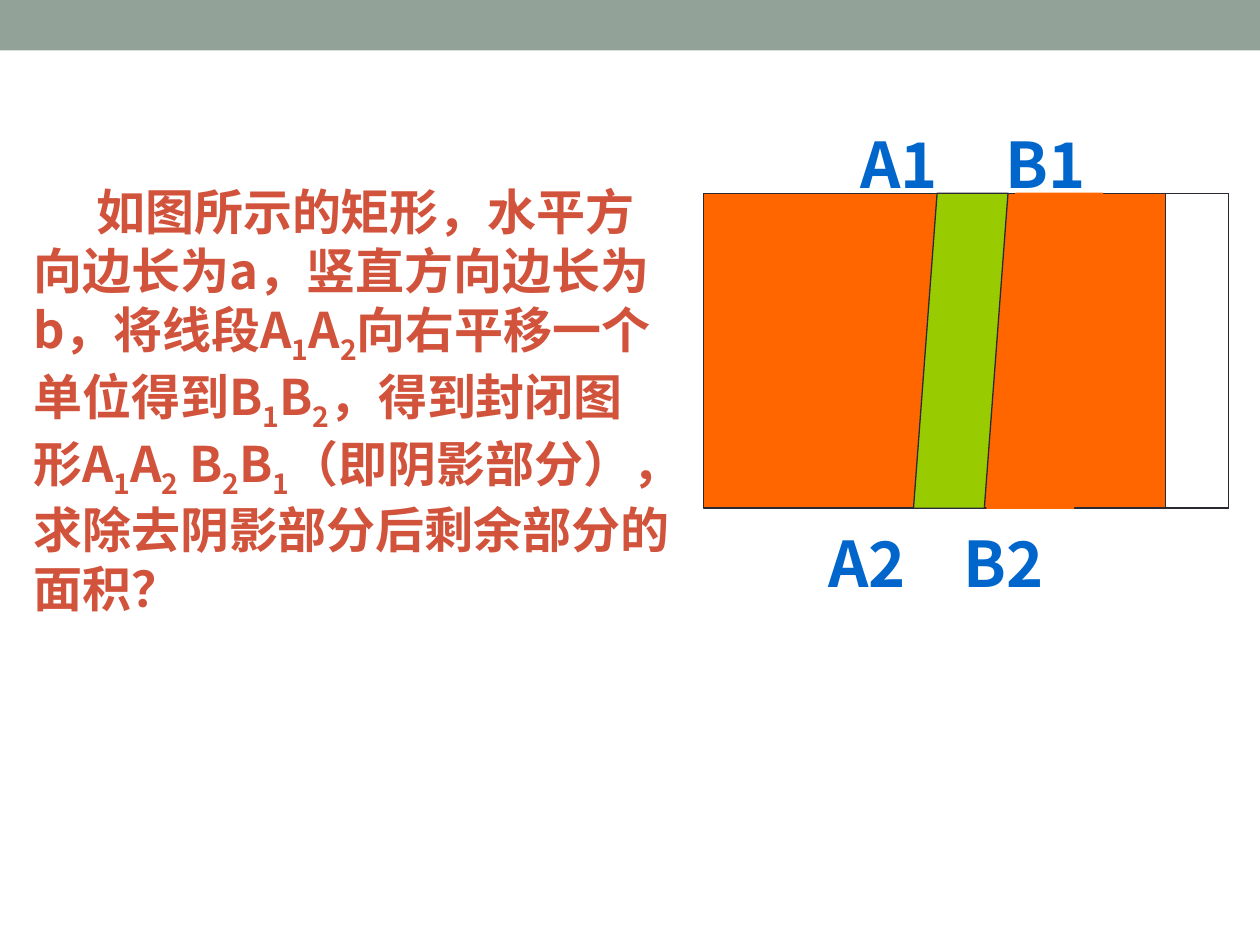
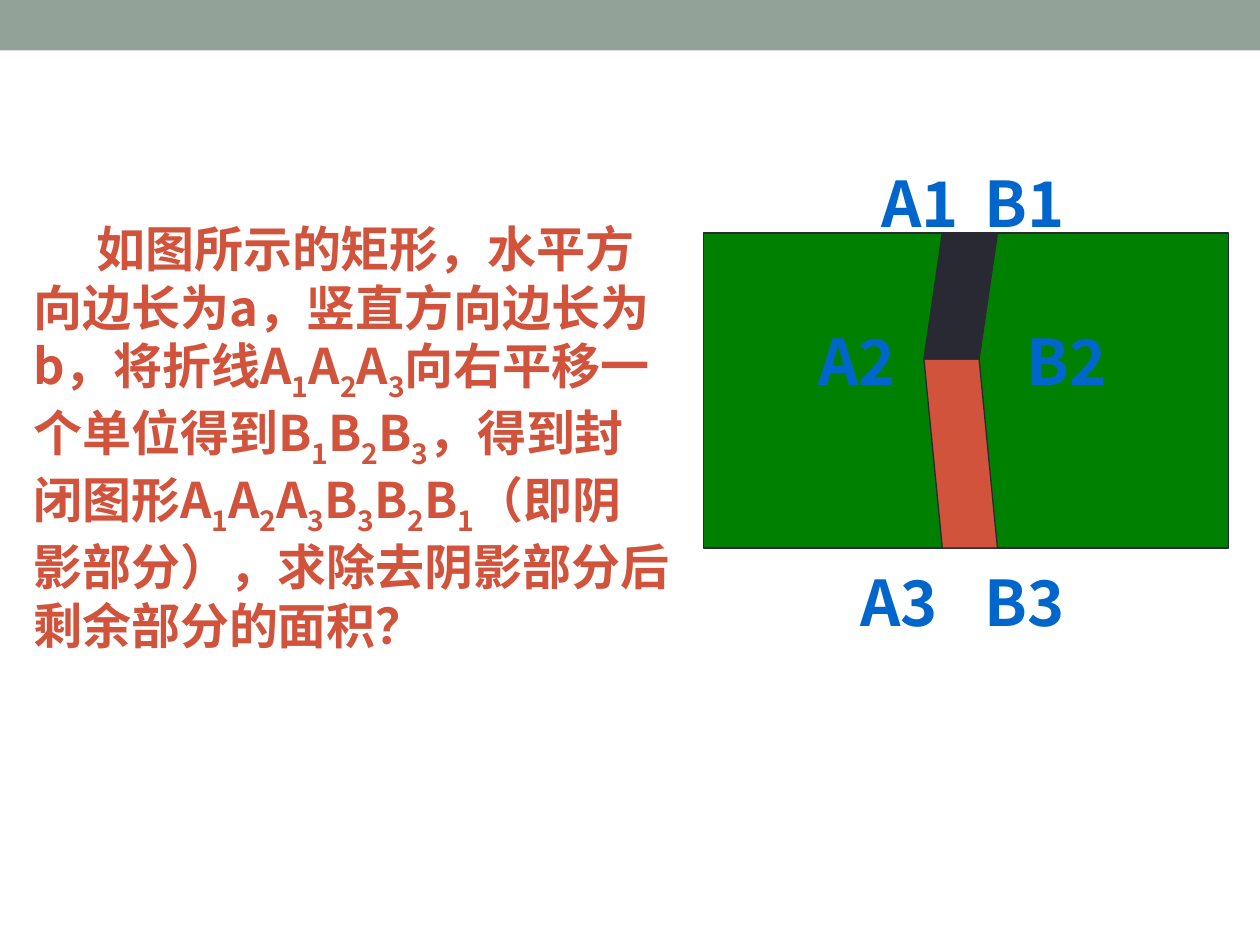
from lxml import etree
from pptx import Presentation
from pptx.dml.color import RGBColor
from pptx.enum.shapes import MSO_SHAPE
from pptx.enum.text import MSO_AUTO_SIZE, PP_ALIGN
from pptx.oxml.ns import qn
from pptx.util import Pt

PX = 7620  # EMU per px, 120 px to the inch
RECT = MSO_SHAPE.RECTANGLE
SLANTED = MSO_SHAPE.PARALLELOGRAM
FIT_SHAPE = MSO_AUTO_SIZE.SHAPE_TO_FIT_TEXT
CENTER = PP_ALIGN.CENTER
FONT = "Noto Sans CJK SC"
COLORS = {
    "band": "93A299", "ink": "292934", "question": "D2533C",
    "label": "0066CC", "label_edge": "99CCFF", "orange": "FF6600",
    "lime": "99CC00", "green": "008000", "white": "FFFFFF",
}
LABEL_SIZE = (92, 60)
INDENT = 60

# Each underscore lowers the digit that follows it.
SLIDES = [
    {
        "figure": [
            (RECT, (670, 184, 500, 300), "orange", "ink", False),
            (SLANTED, (870, 184, 90, 300), "lime", "ink", False),
            (SLANTED, (940, 184, 110, 300), "orange", "orange", False),
            (RECT, (1110, 184, 60, 300), "white", "ink", False),
        ],
        "labels": {"A1": (810, 114), "B1": (950, 114),
                   "A2": (780, 494), "B2": (910, 494)},
        "question_box": (20, 167, 630, 464),
        "question": "如图所示的矩形，水平方向边长为a，竖直方向边长为b，将线段A_1A_2"
                    "向右平移一个单位得到B_1B_2，得到封闭图形A_1A_2 B_2B_1"
                    "（即阴影部分），求除去阴影部分后剩余部分的面积？",
    },
    {
        "figure": [
            (RECT, (670, 222, 500, 300), "green", "ink", False),
            (SLANTED, (880, 342, 70, 180), "question", "ink", True),
            (SLANTED, (880, 222, 70, 120), "ink", "ink", False),
        ],
        "labels": {"A1": (830, 151), "B1": (930, 151),
                   "A2": (770, 301), "B2": (970, 301),
                   "A3": (810, 531), "B3": (930, 531)},
        "question_box": (20, 202, 630, 408),
        "question": "如图所示的矩形，水平方向边长为a，竖直方向边长为b，将折线A_1A_2A_3"
                    "向右平移一个单位得到B_1B_2B_3，得到封闭图形A_1A_2A_3B_3B_2B_1"
                    "（即阴影部分），求除去阴影部分后剩余部分的面积？",
    },
]


def add_filled(slide, preset, box, fill, line=None):
    shape = slide.shapes.add_shape(preset, *(n * PX for n in box))
    shape.shadow.inherit = False
    shape.fill.solid()
    shape.fill.fore_color.rgb = RGBColor.from_string(COLORS[fill])
    if line:
        shape.line.color.rgb = RGBColor.from_string(COLORS[line])
        shape.line.width = Pt(0.75)
    else:
        shape.line.fill.background()
    return shape


def add_bold_run(paragraph, text, size, color):
    """Add a run and return its properties element."""
    run = paragraph.add_run()
    run.text = text
    run.font.size = Pt(size)
    run.font.bold = True
    run.font.color.rgb = RGBColor.from_string(COLORS[color])
    run.font.name = FONT
    properties = run.font._element
    etree.SubElement(properties, qn("a:ea"), typeface=FONT)
    return properties


prs = Presentation()
prs.slide_width, prs.slide_height = 1200 * PX, 900 * PX
blank = prs.slide_layouts[6]

for number, content in enumerate(SLIDES):
    slide = prs.slides.add_slide(blank)

    if number == 0:
        # The band is moved to the layout, so both slides show it.
        band = add_filled(slide, RECT, (0, 0, 1200, 48), "band")
        blank.shapes._spTree.append(band._element)

    for preset, box, fill, line, flipped in content["figure"]:
        part = add_filled(slide, preset, box, fill, line)
        if flipped:
            part._element.spPr.find(qn("a:xfrm")).set("flipH", "1")

    for name, corner in content["labels"].items():
        label = slide.shapes.add_textbox(*(n * PX for n in corner + LABEL_SIZE))
        label.text_frame.word_wrap = False
        label.text_frame.margin_left = label.text_frame.margin_right = 0
        paragraph = label.text_frame.paragraphs[0]
        paragraph.alignment = CENTER
        properties = add_bold_run(paragraph, name, 36, "label")
        edge = etree.Element(qn("a:ln"), w=str(Pt(1.5)))
        edge_fill = etree.SubElement(edge, qn("a:solidFill"))
        etree.SubElement(edge_fill, qn("a:srgbClr"), val=COLORS["label_edge"])
        properties.insert(0, edge)

    question = slide.shapes.add_textbox(*(n * PX for n in content["question_box"]))
    question.text_frame.word_wrap = True
    question.text_frame.auto_size = FIT_SHAPE
    paragraph = question.text_frame.paragraphs[0]
    paragraph._p.get_or_add_pPr().set("indent", str(INDENT * PX))
    opening, *pieces = content["question"].split("_")
    add_bold_run(paragraph, opening, 28, "question")
    for piece in pieces:
        lowered = add_bold_run(paragraph, piece[0], 28, "question")
        lowered.set("baseline", "-25000")
        add_bold_run(paragraph, piece[1:], 28, "question")

prs.save("out.pptx")
